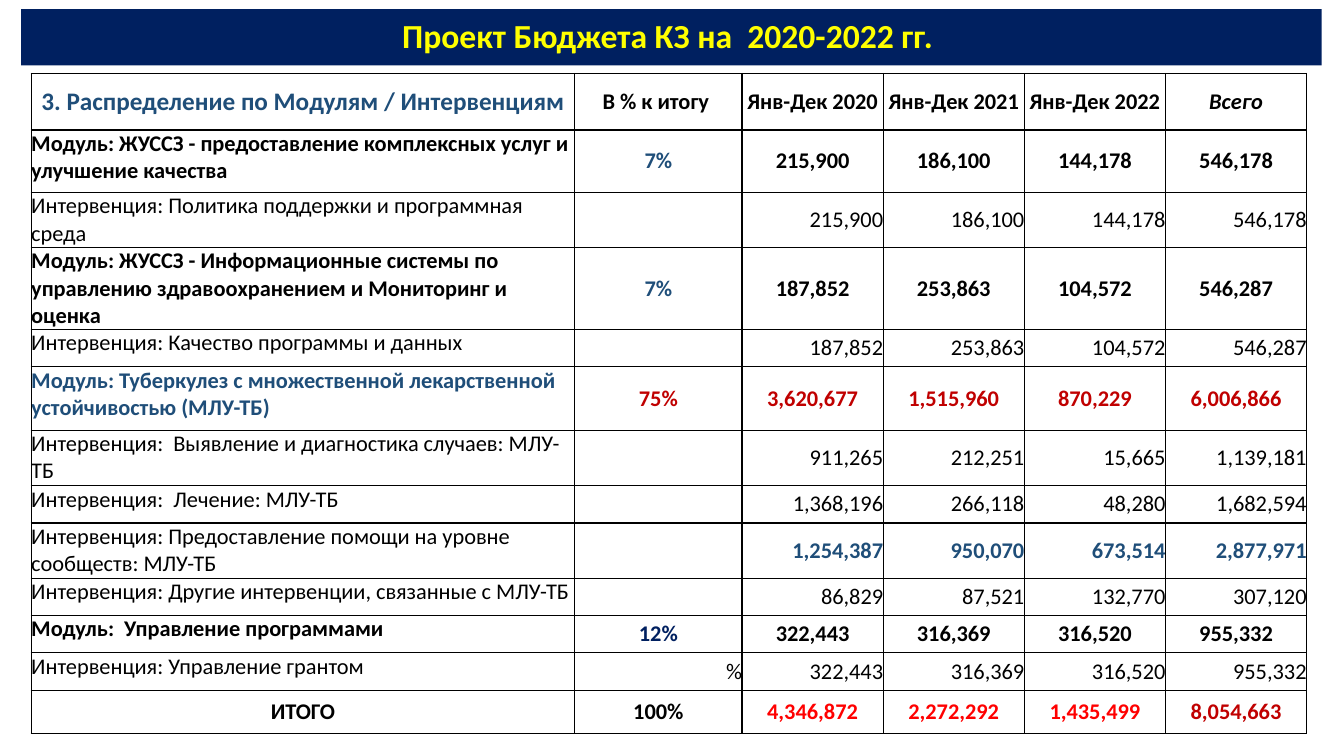
from lxml import etree
from pptx import Presentation
from pptx import util as u
from pptx.dml.color import RGBColor
from pptx.enum import shapes, text
from pptx.oxml.ns import qn

PX = 9144  # EMU per px, 100 px to the inch
FONT = "Calibri"
COLORS = {
    "navy": "002060", "yellow": "FFFF00", "blue": "1F4E79", "black": "000000",
    "crimson": "C00000", "red": "FF0000",
}
LEFT, CENTER, RIGHT = text.PP_ALIGN.LEFT, text.PP_ALIGN.CENTER, text.PP_ALIGN.RIGHT
TOP, MIDDLE = text.MSO_ANCHOR.TOP, text.MSO_ANCHOR.MIDDLE

COLUMN_WIDTHS = [539, 166] + [140] * 4
HEADINGS = ["В % к итогу ", "Янв-Дек 2020", "Янв-Дек 2021", "Янв-Дек 2022", "Всего"]

# Row height, label, share, amounts, then colours that differ from black
MODULE, INTERVENTION = "Модуль: ", "Интервенция: "
BUDGET = [
    (62, MODULE + "ЖУССЗ - предоставление комплексных услуг и улучшение качества",
     "7%", "215,900 186,100 144,178 546,178", {"share": "blue"}),
    (43, INTERVENTION + "Политика поддержки и программная среда",
     "", "215,900 186,100 144,178 546,178", {}),
    (73, MODULE + "ЖУССЗ - Информационные системы по управлению здравоохранением "
     "и Мониторинг и оценка",
     "7%", "187,852 253,863 104,572 546,287", {"share": "blue"}),
    (37, INTERVENTION + "Качество программы и данных",
     "", "187,852 253,863 104,572 546,287", {}),
    (63, MODULE + "Туберкулез с множественной лекарственной устойчивостью (МЛУ-ТБ)",
     "75%", "3,620,677 1,515,960 870,229 6,006,866",
     {"label": "blue", "share": "crimson", "amount": "crimson"}),
    (55, INTERVENTION + " Выявление и диагностика случаев: МЛУ-ТБ",
     "", "911,265 212,251 15,665 1,139,181", {}),
    (37, INTERVENTION + " Лечение: МЛУ-ТБ",
     "", "1,368,196 266,118 48,280 1,682,594", {}),
    (55, INTERVENTION + "Предоставление помощи на уровне сообществ: МЛУ-ТБ",
     "", "1,254,387 950,070 673,514 2,877,971", {"amount": "blue"}),
    (37, INTERVENTION + "Другие интервенции, связанные с МЛУ-ТБ",
     "", "86,829 87,521 132,770 307,120", {}),
    (37, MODULE + " Управление программами",
     "12%", "322,443 316,369 316,520 955,332", {"share": "navy"}),
    (37, INTERVENTION + "Управление грантом",
     "%", "322,443 316,369 316,520 955,332", {}),
    (43, "ИТОГО", "100%", "4,346,872 2,272,292 1,435,499 8,054,663",
     {"amount": "red", "total": "crimson"}),
]


def px(*lengths):
    return [u.Emu(length * PX) for length in lengths]


def rgb(name):
    return RGBColor.from_string(COLORS[name])


def add_run(paragraph, words, size, color, bold=True, italic=False):
    run = paragraph.add_run()
    run.text = words
    run.font.name, run.font.size = FONT, u.Pt(size)
    run.font.bold, run.font.italic = bold, italic
    run.font.color.rgb = rgb(color)


def add_title_bar(slide, words):
    bar = slide.shapes.add_shape(shapes.MSO_SHAPE.RECTANGLE, *px(21, 9, 1290, 56))
    bar.shadow.inherit = False
    bar.fill.solid()
    bar.fill.fore_color.rgb = rgb("navy")
    bar.line.fill.background()
    bar.text_frame.vertical_anchor = MIDDLE
    title = bar.text_frame.paragraphs[0]
    title.alignment, title.line_spacing = CENTER, 0.9
    add_run(title, words, 24, "yellow")


def add_borders(cell):
    properties = cell._tc.get_or_add_tcPr()
    for side in ("lnL", "lnR", "lnT", "lnB"):
        line = etree.SubElement(properties, qn("a:" + side), w=str(u.Pt(1)))
        fill = etree.SubElement(line, qn("a:solidFill"))
        etree.SubElement(fill, qn("a:srgbClr"), val=COLORS["black"])


def fill_cell(cell, words, color="black", align=CENTER, anchor=MIDDLE,
              size=16, bold=True, italic=False):
    add_borders(cell)
    cell.fill.background()
    cell.margin_left = cell.margin_right = cell.margin_top = cell.margin_bottom = 0
    cell.vertical_anchor = anchor
    paragraph = cell.text_frame.paragraphs[0]
    paragraph.alignment = align
    if words:
        add_run(paragraph, words, size, color, bold, italic)


def fill_budget_row(cells, label, share, amounts, colors):
    detail = label.startswith(INTERVENTION)
    grand_total = label == "ИТОГО"
    number_align = RIGHT if detail else CENTER
    amount_color = colors.get("amount", "black")
    amount_bold = not detail or "amount" in colors

    fill_cell(cells[0], label, colors.get("label", "black"),
              CENTER if grand_total else LEFT, MIDDLE if grand_total else TOP,
              bold=not detail)
    fill_cell(cells[1], share, colors.get("share", "black"), number_align, bold=not detail)
    *years, total = amounts.split()
    for cell, amount in zip(cells[2:5], years):
        fill_cell(cell, amount, amount_color, number_align, bold=amount_bold)
    fill_cell(cells[5], total, colors.get("total", amount_color), number_align,
              bold=amount_bold)


def add_budget_table(slide):
    heights = [56] + [row[0] for row in BUDGET]
    frame = slide.shapes.add_table(len(heights), len(COLUMN_WIDTHS),
                                   *px(31, 73, sum(COLUMN_WIDTHS), sum(heights)))
    table = frame.table
    table.first_row = table.horz_banding = False
    for column, width in zip(table.columns, px(*COLUMN_WIDTHS)):
        column.width = width
    for row, height in zip(table.rows, px(*heights)):
        row.height = height

    # Heading row
    heading_cells = list(table.rows[0].cells)
    fill_cell(heading_cells[0], "3. Распределение по Mодулям / Интервенциям", "blue", size=18)
    for cell, heading in zip(heading_cells[1:], HEADINGS):
        fill_cell(cell, heading, italic=heading == "Всего")

    # Modules, their interventions and the grand total
    for index, (_, *content) in enumerate(BUDGET, start=1):
        fill_budget_row(list(table.rows[index].cells), *content)


def main():
    deck = Presentation()
    deck.slide_width, deck.slide_height = px(1333, 750)
    slide = deck.slides.add_slide(deck.slide_layouts[6])
    add_title_bar(slide, "Проект Бюджета КЗ на  2020-2022 гг. ")
    add_budget_table(slide)
    deck.save("out.pptx")


if __name__ == "__main__":
    main()
